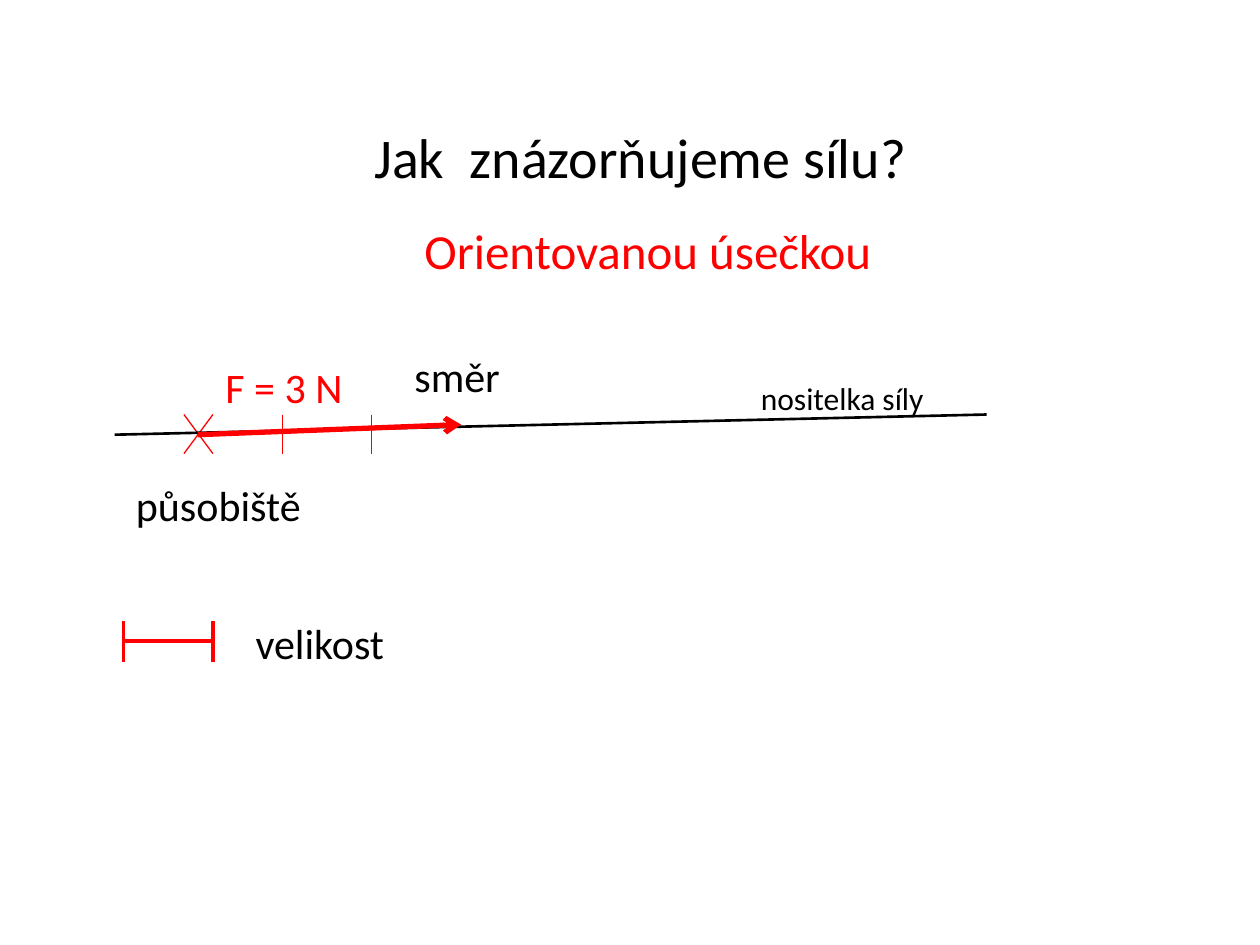
from dataclasses import dataclass

from lxml import etree
from pptx import Presentation
from pptx import util as u
from pptx.dml.color import RGBColor
from pptx.enum import shapes, text
from pptx.oxml.ns import qn


@dataclass(frozen=True)
class Theme:
    font: str = "Calibri"
    ink: str = "000000"
    accent: str = "FF0000"
    title: int = 32
    subtitle: int = 28
    label: int = 24
    small: int = 18
    thin: float = 0.75
    axis: float = 1.5
    scale: float = 2.25
    vector: float = 3


class Deck:
    """Holds the theme and the current slide."""

    def __init__(self, theme):
        self.theme = theme
        self.prs = Presentation()
        self.prs.slide_width, self.prs.slide_height = u.Inches(10), u.Inches(7.5)
        self.s = self.prs.slides.add_slide(self.prs.slide_layouts[5])

    def put_text(self, sp, words, size, color):
        tf = sp.text_frame
        tf.word_wrap = False
        tf.auto_size = text.MSO_AUTO_SIZE.SHAPE_TO_FIT_TEXT
        tf.vertical_anchor = text.MSO_ANCHOR.TOP
        p = tf.paragraphs[0]
        p.alignment = text.PP_ALIGN.LEFT
        r = p.add_run()
        r.text = words
        r.font.name, r.font.size = self.theme.font, u.Pt(size)
        r.font.color.rgb = RGBColor.from_string(color)

    def title(self, words, x, y, w, h):
        sp = self.s.shapes.title
        sp.left, sp.top, sp.width, sp.height = map(u.Inches, (x, y, w, h))
        self.put_text(sp, words, self.theme.title, self.theme.ink)

    def label(self, words, x, y, w, h, size, color):
        sp = self.s.shapes.add_textbox(*map(u.Inches, (x, y, w, h)))
        self.put_text(sp, words, size, color)

    def line(self, start, end, width, color, arrow=False, parent=None):
        owner = parent or self.s
        cx = owner.shapes.add_connector(
            shapes.MSO_CONNECTOR.STRAIGHT, *map(u.Inches, (*start, *end)))
        cx.line.width = u.Pt(width)
        cx.line.color.rgb = RGBColor.from_string(color)
        sp_pr = cx._element.spPr
        if arrow:
            etree.SubElement(sp_pr.find(qn("a:ln")), qn("a:tailEnd"), type="arrow")
        etree.SubElement(sp_pr, qn("a:effectLst"))

    def unit_bar(self, left, right, y, tick):
        """Draw a grouped scale bar with a tick at each end."""
        group = self.s.shapes.add_group_shape()
        ends = [((left, y), (right, y))]
        ends += [((x, y - tick / 2), (x, y + tick / 2)) for x in (left, right)]
        for start, end in ends:
            self.line(start, end, self.theme.scale, self.theme.accent, parent=group)


def main():
    t = Theme()
    deck = Deck(t)
    deck.title("Jak  znázorňujeme sílu?", 2.87, 0.92, 4.47, 0.64)
    deck.label("Orientovanou úsečkou", 3.27, 1.7, 3.79, 0.57, t.subtitle, t.accent)

    deck.unit_bar(0.98, 1.69, 5.09, 0.32)

    top, bottom = 3.29, 3.6
    cross_left, cross_right = 1.46, 1.69
    marks = [(cross_right, cross_left), (cross_left, cross_right),
             (2.24, 2.24), (2.95, 2.95)]
    for x1, x2 in marks:
        deck.line((x1, top), (x2, bottom), t.thin, t.accent)

    deck.line((0.91, 3.45), (7.83, 3.29), t.axis, t.ink)
    deck.line((1.57, 3.45), (3.66, 3.37), t.vector, t.accent, arrow=True)

    for words, x, y, w, color in [
        ("velikost", 1.93, 4.85, 1.23, t.ink),
        ("působiště", 0.98, 3.76, 1.52, t.ink),
        ("směr", 3.19, 2.73, 0.89, t.ink),
        ("F = 3 N", 1.69, 2.82, 1.14, t.accent),
    ]:
        deck.label(words, x, y, w, 0.5, t.label, color)
    deck.label("nositelka síly", 5.94, 2.96, 1.51, 0.4, t.small, t.ink)

    deck.prs.save("out.pptx")


if __name__ == "__main__":
    main()
